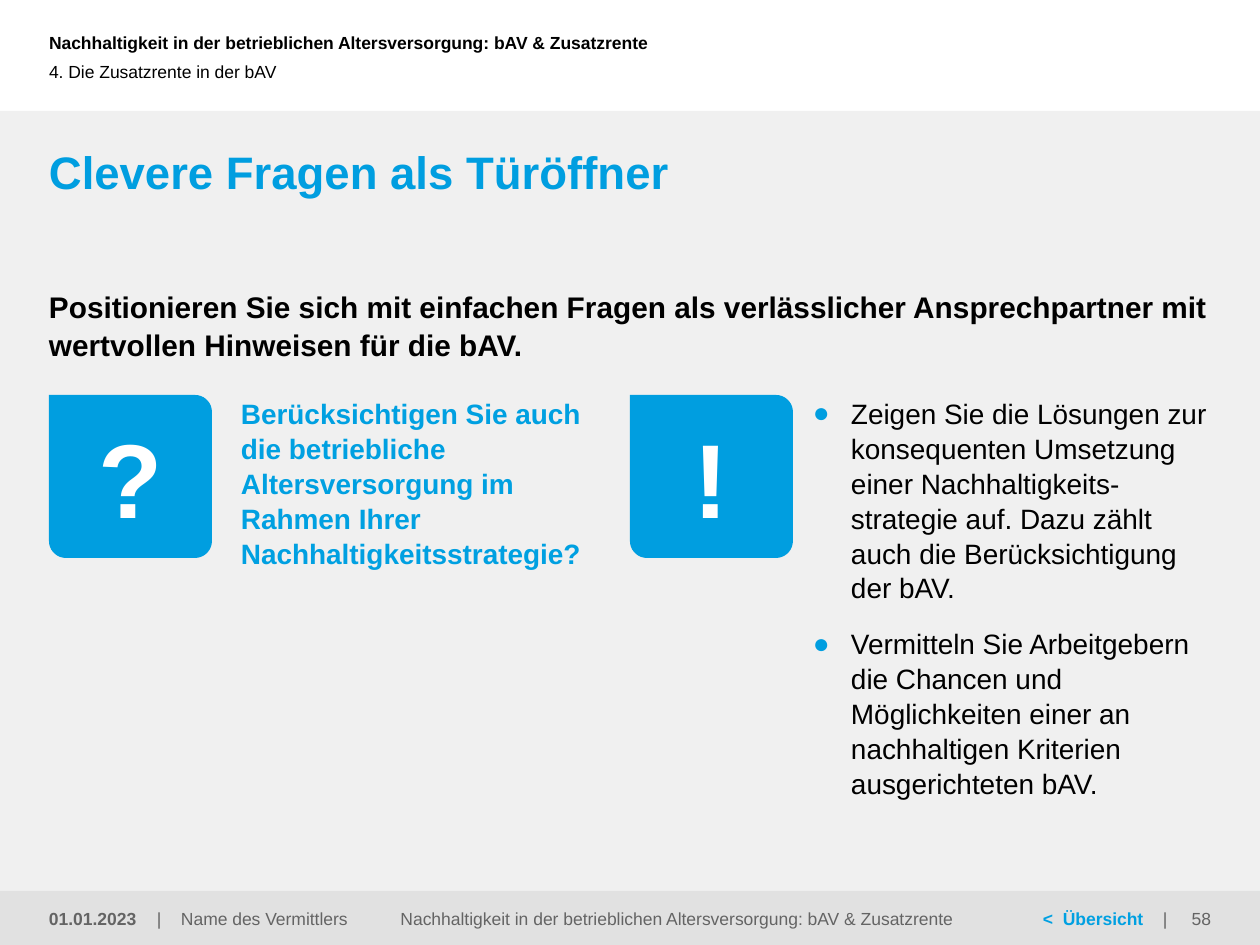
import math
from dataclasses import dataclass

import pptx
import pptx.dml.color
import pptx.enum.shapes
import pptx.enum.text
import pptx.oxml.ns
import pptx.util
from lxml import etree

PX = 914400 // 126
WIDTH, HEIGHT, MARGIN = 1260, 945, 49
FOOTER_TOP, FOOTER_HEIGHT = 891, 54
TILE_TOP, TILE_SIZE, TILE_RADIUS = 395, 163, 17
COLORS = {
    "black": "000000",
    "white": "FFFFFF",
    "blue": "009EE0",
    "link": "00A0E1",
    "grey": "646464",
    "panel": "F0F0F0",
    "footer": "E1E1E1",
}
ALIGN = pptx.enum.text.PP_ALIGN
ANCHOR = pptx.enum.text.MSO_ANCHOR
TOPIC = "Nachhaltigkeit in der betrieblichen Altersversorgung: bAV & Zusatzrente"


@dataclass(frozen=True)
class Band:
    top: int
    height: int
    color: str


@dataclass(frozen=True)
class Label:
    left: int
    top: int
    width: int
    height: int
    paragraphs: tuple[str, ...]
    size: int = 10
    color: str = "black"
    bold: bool = False
    align: ALIGN = ALIGN.LEFT
    anchor: ANCHOR = ANCHOR.MIDDLE
    inset_left: int = 0
    inset_right: int = 0
    spacing: float = 1.0
    bulleted: bool = False
    tabs: tuple[int, ...] = ()


@dataclass(frozen=True)
class Tile:
    left: int
    symbol: str


BANDS = (
    Band(111, HEIGHT - 111, "panel"),
    Band(FOOTER_TOP, FOOTER_HEIGHT, "footer"),
)
TILES = (Tile(MARGIN, "?"), Tile(630, "!"))
LABELS = (
    Label(0, 0, 880, 85, (TOPIC,), bold=True, inset_left=MARGIN),
    Label(0, 32, 901, 79, ("4. Die Zusatzrente in der bAV",), inset_left=MARGIN),
    Label(MARGIN, 144, 1162, 69, ("Clevere Fragen als Türöffner",), 26, "blue",
          bold=True, anchor=ANCHOR.TOP),
    Label(MARGIN, 287, 1162, 72,
          ("Positionieren Sie sich mit einfachen Fragen als verlässlicher "
           "Ansprechpartner mit wertvollen Hinweisen für die bAV.",),
          17, bold=True, anchor=ANCHOR.TOP, spacing=1.05),
    Label(241, TILE_TOP, 364, 437,
          ("Berücksichtigen Sie auch die betriebliche Altersversorgung "
           "im Rahmen Ihrer Nachhaltigkeitsstrategie?",),
          16, "link", bold=True, anchor=ANCHOR.TOP, spacing=1.04),
    Label(813, TILE_TOP, 398, 437,
          ("Zeigen Sie die Lösungen zur konsequenten Umsetzung einer "
           "Nachhaltigkeits-strategie auf. Dazu zählt auch die "
           "Berücksichtigung der bAV.",
           "Vermitteln Sie Arbeitgebern die Chancen und Möglichkeiten "
           "einer an nachhaltigen Kriterien ausgerichteten bAV."),
          16, anchor=ANCHOR.TOP, spacing=1.04, bulleted=True),
    Label(0, FOOTER_TOP, 154, FOOTER_HEIGHT, ("01.01.2023",), color="grey",
          bold=True, inset_left=MARGIN),
    Label(157, FOOTER_TOP, 305, FOOTER_HEIGHT, ("|\tName des Vermittlers",),
          color="grey", tabs=(24,)),
    Label(374, FOOTER_TOP, 605, FOOTER_HEIGHT, (TOPIC,), color="grey",
          align=ALIGN.CENTER),
    Label(1142, FOOTER_TOP, 118, FOOTER_HEIGHT, ("58",), color="grey",
          align=ALIGN.RIGHT, inset_right=MARGIN),
)
OVERVIEW = Label(867, FOOTER_TOP, 305, FOOTER_HEIGHT, ("<\tÜbersicht",),
                 color="link", bold=True, inset_left=176, tabs=(20, 120))


def rgb(name: str) -> pptx.dml.color.RGBColor:
    return pptx.dml.color.RGBColor.from_string(COLORS[name])


def add_property(paragraph, tag: str, **attributes: str):
    properties = paragraph._p.get_or_add_pPr()
    return etree.SubElement(properties, pptx.oxml.ns.qn(tag), attributes)


def add_bullet(paragraph, indent: int) -> None:
    properties = paragraph._p.get_or_add_pPr()
    properties.set("marL", str(indent * PX))
    properties.set("indent", str(-indent * PX))
    bullet_color = add_property(paragraph, "a:buClr")
    etree.SubElement(bullet_color, pptx.oxml.ns.qn("a:srgbClr"), val=COLORS["blue"])
    add_property(paragraph, "a:buFont", typeface="Arial")
    add_property(paragraph, "a:buChar", char="●")


def add_tabs(paragraph, positions: tuple[int, ...]) -> None:
    tab_list = add_property(paragraph, "a:tabLst")
    for position in positions:
        etree.SubElement(tab_list, pptx.oxml.ns.qn("a:tab"),
                         pos=str(position * PX), algn="l")


def style_font(font, size: int, color: str, bold: bool) -> None:
    font.name = "Arial"
    font.size = pptx.util.Pt(size)
    font.bold = bold
    font.color.rgb = rgb(color)


def paint(shape, color: str) -> None:
    shape.shadow.inherit = False
    shape.fill.solid()
    shape.fill.fore_color.rgb = rgb(color)
    shape.line.fill.background()


def draw_band(slide, band: Band) -> None:
    paint(slide.shapes.add_shape(
        pptx.enum.shapes.MSO_SHAPE.RECTANGLE,
        0, band.top * PX, WIDTH * PX, band.height * PX), band.color)


def draw_label(slide, label: Label):
    frame = slide.shapes.add_textbox(
        label.left * PX, label.top * PX, label.width * PX, label.height * PX).text_frame
    frame.word_wrap = True
    frame.vertical_anchor = label.anchor
    frame.margin_left = label.inset_left * PX
    frame.margin_right = label.inset_right * PX
    frame.margin_top = frame.margin_bottom = 0
    for index, text in enumerate(label.paragraphs):
        paragraph = frame.add_paragraph() if index else frame.paragraphs[0]
        paragraph.alignment = label.align
        paragraph.line_spacing = label.spacing
        if index:
            paragraph.space_before = pptx.util.Pt(12)
        if label.bulleted:
            add_bullet(paragraph, 38)
        if label.tabs:
            add_tabs(paragraph, label.tabs)
        paragraph.add_run().text = text
        style_font(paragraph.font, label.size, label.color, label.bold)
    return frame


def draw_overview_link(slide) -> None:
    paragraph = draw_label(slide, OVERVIEW).paragraphs[0]
    separator = paragraph.add_run()
    separator.text = "\t|"
    style_font(separator.font, OVERVIEW.size, "grey", False)


def draw_tile(slide, tile: Tile) -> None:
    """Draw a square whose corners are rounded except the top left one."""
    near, far = TILE_RADIUS, TILE_SIZE - TILE_RADIUS
    corners = ((far, near, -90), (far, far, 0), (near, far, 90))
    outline = [
        ((tile.left + x + TILE_RADIUS * math.cos(math.radians(start + step))) * PX,
         (TILE_TOP + y + TILE_RADIUS * math.sin(math.radians(start + step))) * PX)
        for x, y, start in corners for step in range(0, 91, 10)
    ]
    builder = slide.shapes.build_freeform(tile.left * PX, TILE_TOP * PX)
    builder.add_line_segments(outline, close=True)
    shape = builder.convert_to_shape()
    paint(shape, "blue")
    shape.text_frame.vertical_anchor = ANCHOR.MIDDLE
    paragraph = shape.text_frame.paragraphs[0]
    paragraph.alignment = ALIGN.CENTER
    paragraph.add_run().text = tile.symbol
    style_font(paragraph.font, 60, "white", True)


def main() -> None:
    presentation = pptx.Presentation()
    presentation.slide_width = WIDTH * PX
    presentation.slide_height = HEIGHT * PX
    slide = presentation.slides.add_slide(presentation.slide_layouts[6])
    for band in BANDS:
        draw_band(slide, band)
    for label in LABELS:
        draw_label(slide, label)
    draw_overview_link(slide)
    for tile in TILES:
        draw_tile(slide, tile)
    presentation.save("out.pptx")


if __name__ == "__main__":
    main()
